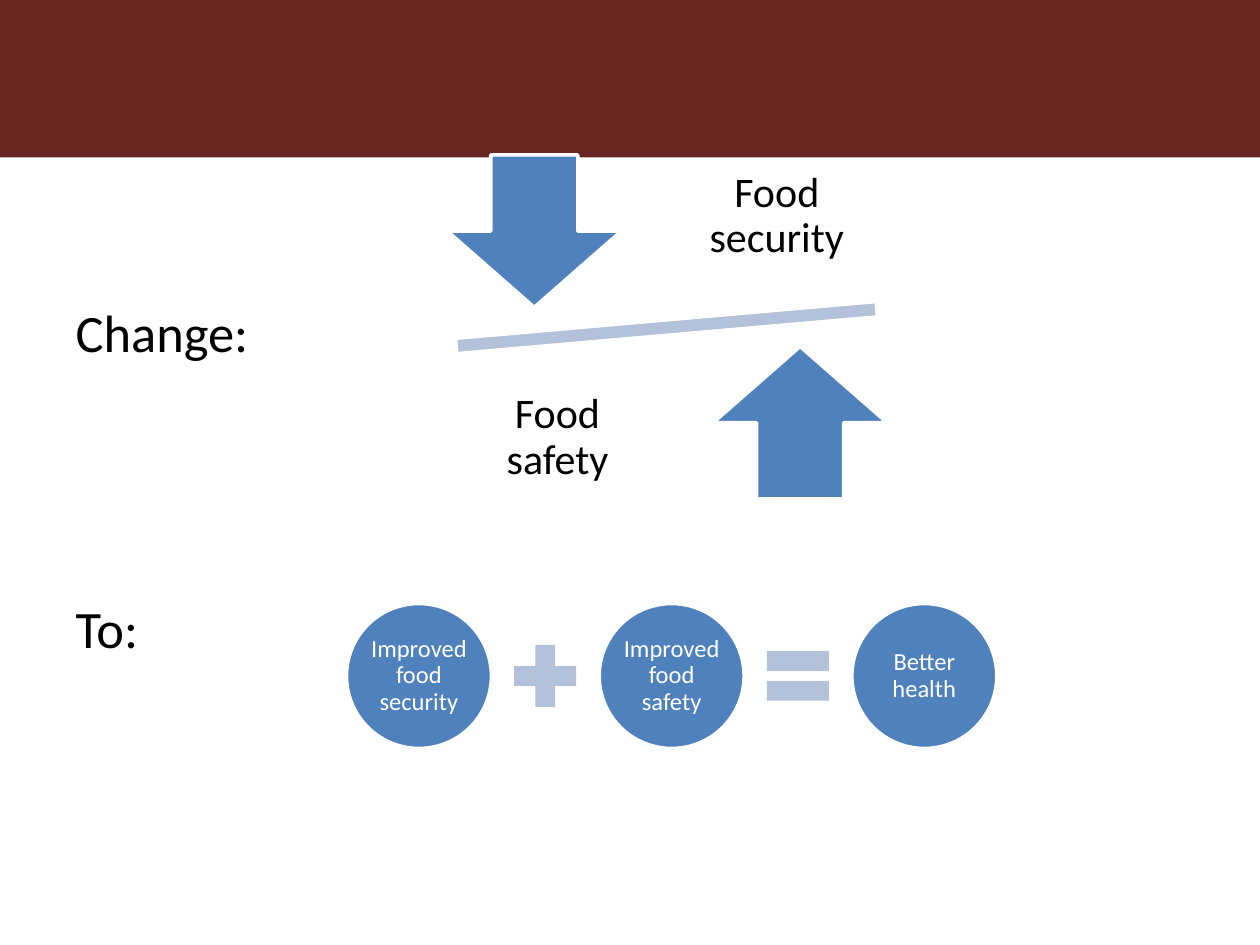
from pptx import Presentation
from pptx.dml.color import RGBColor
from pptx.enum.shapes import MSO_SHAPE
from pptx.enum.text import MSO_ANCHOR, MSO_AUTO_SIZE, PP_ALIGN
from pptx.oxml.ns import qn
from pptx.util import Pt

FONT = "Calibri"
MAROON, BLUE, PALE, WHITE, BLACK = "682622", "4F81BD", "B3C1DB", "FFFFFF", "000000"

HEADINGS = ["Change:", "To:"]
ARROWS = [  # preset, left, top
    (MSO_SHAPE.DOWN_ARROW, 255.6, 88.5),
    (MSO_SHAPE.UP_ARROW, 407.5, 198),
]
ARROW_LABELS = [  # text, left, top
    ("Food security", 391, 77.8),
    ("Food safety", 265.7, 204.5),
]
EQUATION = [
    "Improved food security", MSO_SHAPE.MATH_PLUS,
    "Improved food safety", MSO_SHAPE.MATH_EQUAL,
    "Better health",
]
FIRST_CENTER, CENTER_Y, STEP = 239.4, 386.3, 72.2
CIRCLE, OPERATOR = 82.8, 48.2


def color(value):
    return RGBColor.from_string(value)


def add_preset(slide, preset, left, top, width, height, fill, outline=None):
    shape = slide.shapes.add_shape(preset, Pt(left), Pt(top), Pt(width), Pt(height))
    shape.shadow.inherit = False
    shape.fill.solid()
    shape.fill.fore_color.rgb = color(fill)
    if outline:
        shape.line.color.rgb = color(outline)
        shape.line.width = Pt(2)
    else:
        shape.line.fill.background()
    return shape


def write(box, *lines, size, ink, align=PP_ALIGN.CENTER, anchor=MSO_ANCHOR.MIDDLE,
          spacing=0.9, after=0, inset=None):
    frame = box.text_frame
    frame.word_wrap = True
    frame.auto_size = MSO_AUTO_SIZE.NONE
    frame.vertical_anchor = anchor
    if inset is not None:
        frame.margin_left = frame.margin_right = Pt(inset)
        frame.margin_top = frame.margin_bottom = Pt(inset)
    for index, line in enumerate(lines):
        para = frame.paragraphs[0] if index == 0 else frame.add_paragraph()
        para.alignment = align
        para.line_spacing = spacing
        para.space_before = Pt(0)
        para.space_after = Pt(after)
        span = para.add_run()
        span.text = line
        span.font.name = FONT
        span.font.size = Pt(size)
        span.font.color.rgb = color(ink)


def remove_bullets(box):
    for para in box.text_frame.paragraphs:
        properties = para._p.get_or_add_pPr()
        properties.set("marL", "0")
        properties.set("indent", "0")
        properties.append(properties.makeelement(qn("a:buNone"), {}))


def add_headings(slide):
    title = slide.shapes.title
    title._element.getparent().remove(title._element)
    body = slide.placeholders[1]
    body.left, body.top, body.width, body.height = Pt(36), Pt(131.8), Pt(648), Pt(360)
    write(body, *HEADINGS, size=30, ink=BLACK, align=PP_ALIGN.LEFT,
          anchor=MSO_ANCHOR.TOP, spacing=2.0, after=97)
    remove_bullets(body)


def add_seesaw(slide):
    beam = add_preset(slide, MSO_SHAPE.MATH_MINUS, 216.7, 168.5, 328.3, 37.4, PALE, WHITE)
    beam.rotation = 355
    for preset, left, top in ARROWS:
        add_preset(slide, preset, left, top, 99.4, 87.1, BLUE, WHITE)
    for text, left, top in ARROW_LABELS:
        label = slide.shapes.add_textbox(Pt(left), Pt(top), Pt(105.8), Pt(91.4))
        write(label, text, size=24, ink=BLACK, inset=13.5)


def add_equation(slide):
    for index, item in enumerate(EQUATION):
        is_term = isinstance(item, str)
        side = CIRCLE if is_term else OPERATOR
        left = FIRST_CENTER + index * STEP - side / 2
        top = CENTER_Y - side / 2
        if is_term:
            circle = add_preset(slide, MSO_SHAPE.OVAL, left, top, side, side, BLUE, WHITE)
            write(circle, item, size=14, ink=WHITE, inset=1.4)
        else:
            add_preset(slide, item, left, top, side, side, PALE)


def main():
    deck = Presentation()
    deck.slide_width, deck.slide_height = Pt(720), Pt(540)
    slide = deck.slides.add_slide(deck.slide_layouts[1])
    add_preset(slide, MSO_SHAPE.RECTANGLE, 0, 0, 720, 90, MAROON)
    add_headings(slide)
    add_seesaw(slide)
    add_equation(slide)
    deck.save("out.pptx")


if __name__ == "__main__":
    main()
